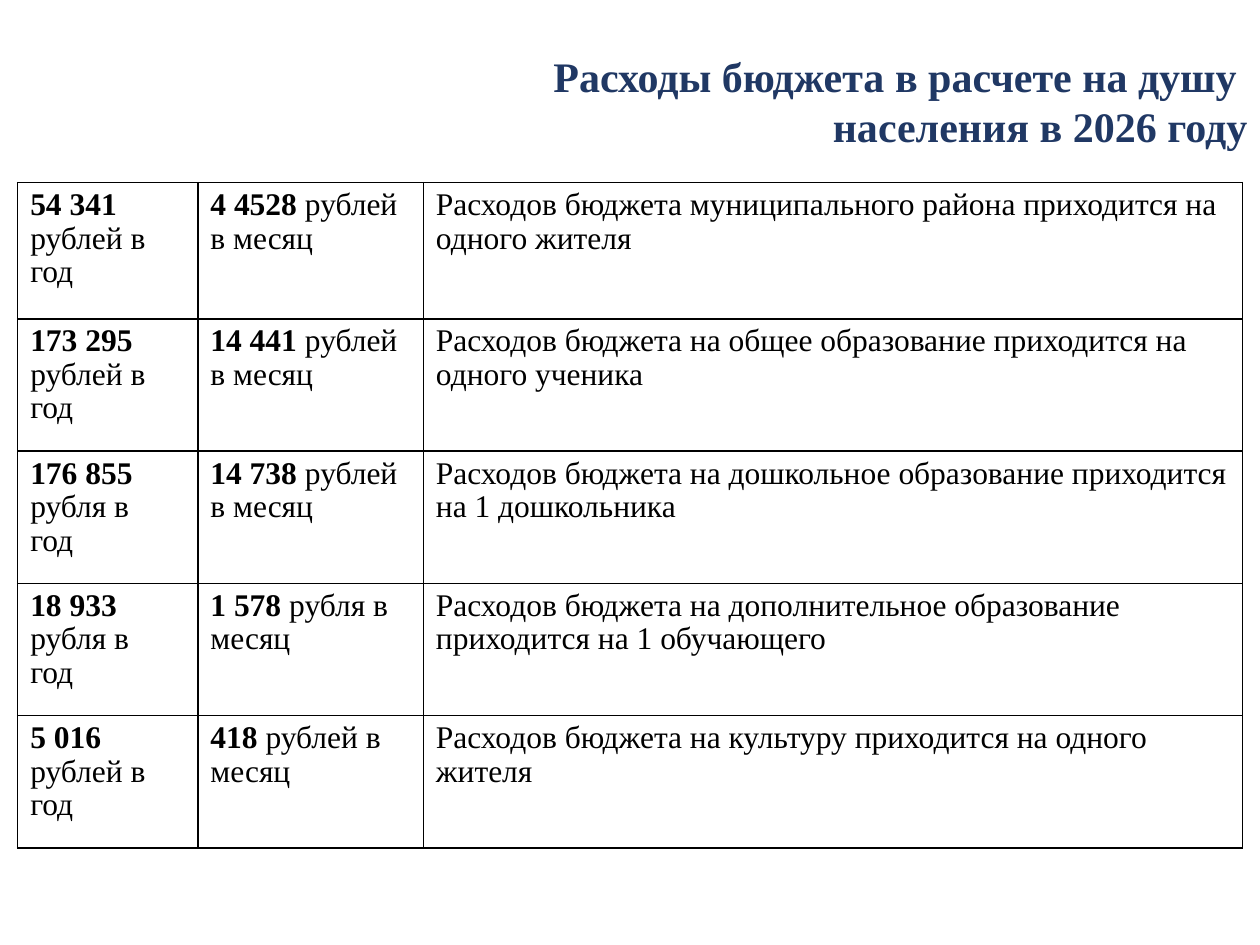
from lxml import etree
from pptx import Presentation
from pptx import util as u
from pptx.dml.color import RGBColor
from pptx.enum import text
from pptx.oxml import ns

NAVY = RGBColor(0x20, 0x38, 0x64)
BLACK = RGBColor(0, 0, 0)
FONT = "Times New Roman"
COLUMNS = [1.43, 1.79, 6.5]
ROWS = [1.08] + [1.05] * 4

# Per line: yearly sum and its unit, monthly sum and its unit, purpose
EXPENSES = [
    ("54 341 ", "рублей в год", "4 4528 ", "рублей в месяц",
     "Расходов бюджета муниципального района приходится на одного жителя"),
    ("173 295 ", "рублей в год", "14 441 ", "рублей в месяц",
     "Расходов бюджета на общее образование приходится на одного ученика"),
    ("176 855 ", "рубля в\nгод", "14 738 ", "рублей в месяц",
     "Расходов бюджета на дошкольное образование приходится на 1 дошкольника"),
    ("18 933 ", "рубля в\nгод", "1 578 ", "рубля в месяц",
     "Расходов бюджета на дополнительное образование приходится на 1 обучающего"),
    ("5 016 ", "рублей в год", "418 ", "рублей в месяц",
     "Расходов бюджета на культуру приходится на одного жителя"),
]


def style(paragraph, size, color):
    paragraph.font.name = FONT
    paragraph.font.size = u.Pt(size)
    paragraph.font.color.rgb = color


def add_borders(cell):
    properties = cell._tc.get_or_add_tcPr()
    for position, side in enumerate(("lnL", "lnR", "lnT", "lnB")):
        line = etree.Element(ns.qn(f"a:{side}"), w=str(u.Pt(1)))
        fill = etree.SubElement(line, ns.qn("a:solidFill"))
        etree.SubElement(fill, ns.qn("a:srgbClr"), val=str(BLACK))
        properties.insert(position, line)


prs = Presentation()
prs.slide_width, prs.slide_height = u.Inches(10), u.Inches(7.5)
slide = prs.slides.add_slide(prs.slide_layouts[5])

title = slide.shapes.title
title.left, title.top = u.Inches(0.35), u.Inches(0.29)
title.width, title.height = u.Inches(9.65), u.Inches(1.02)
title.text_frame.text = "Расходы бюджета в расчете на душу \nнаселения в 2026 году"
title.text_frame.vertical_anchor = text.MSO_ANCHOR.MIDDLE
for paragraph in title.text_frame.paragraphs:
    paragraph.alignment = text.PP_ALIGN.RIGHT
    style(paragraph, 24, NAVY)
    paragraph.font.bold = True

table = slide.shapes.add_table(
    len(ROWS), len(COLUMNS), u.Inches(0.14), u.Inches(1.45),
    u.Inches(sum(COLUMNS)), u.Inches(sum(ROWS))).table
table.first_row = table.horz_banding = False
for column, width in zip(table.columns, COLUMNS):
    column.width = u.Inches(width)

for row, height, expense in zip(table.rows, ROWS, EXPENSES):
    row.height = u.Inches(height)
    year_sum, year_unit, month_sum, month_unit, purpose = expense
    contents = [(year_sum, year_unit), (month_sum, month_unit), ("", purpose)]
    for cell, (amount, wording) in zip(row.cells, contents):
        cell.fill.background()
        add_borders(cell)
        first, *rest = wording.split("\n")
        frame = cell.text_frame
        if amount:
            amount_run = frame.paragraphs[0].add_run()
            amount_run.text = amount
            amount_run.font.bold = True
        frame.paragraphs[0].add_run().text = first
        for line in rest:
            frame.add_paragraph().add_run().text = line
        for paragraph in frame.paragraphs:
            paragraph.line_spacing = 0.96
            style(paragraph, 18, BLACK)

prs.save("out.pptx")
